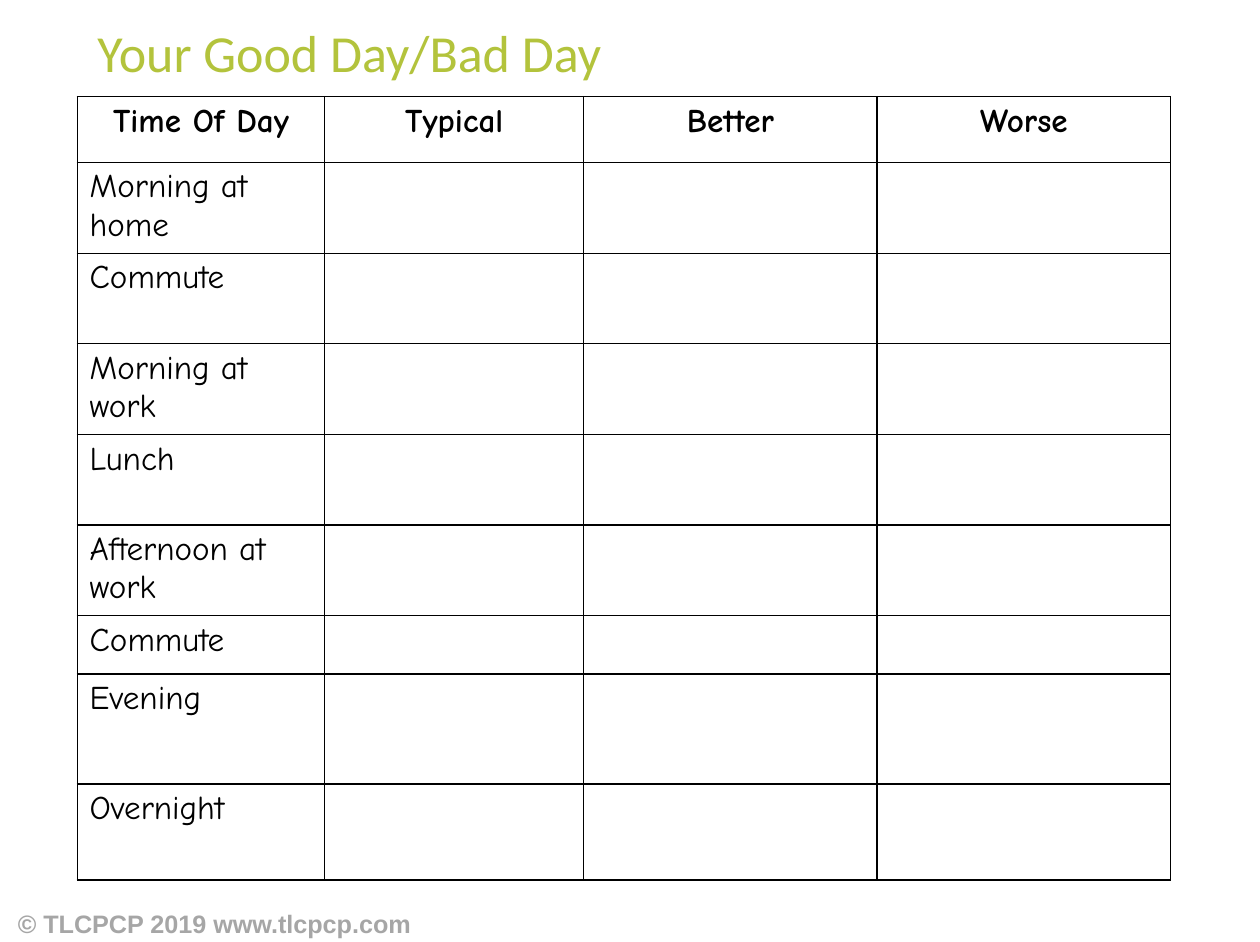
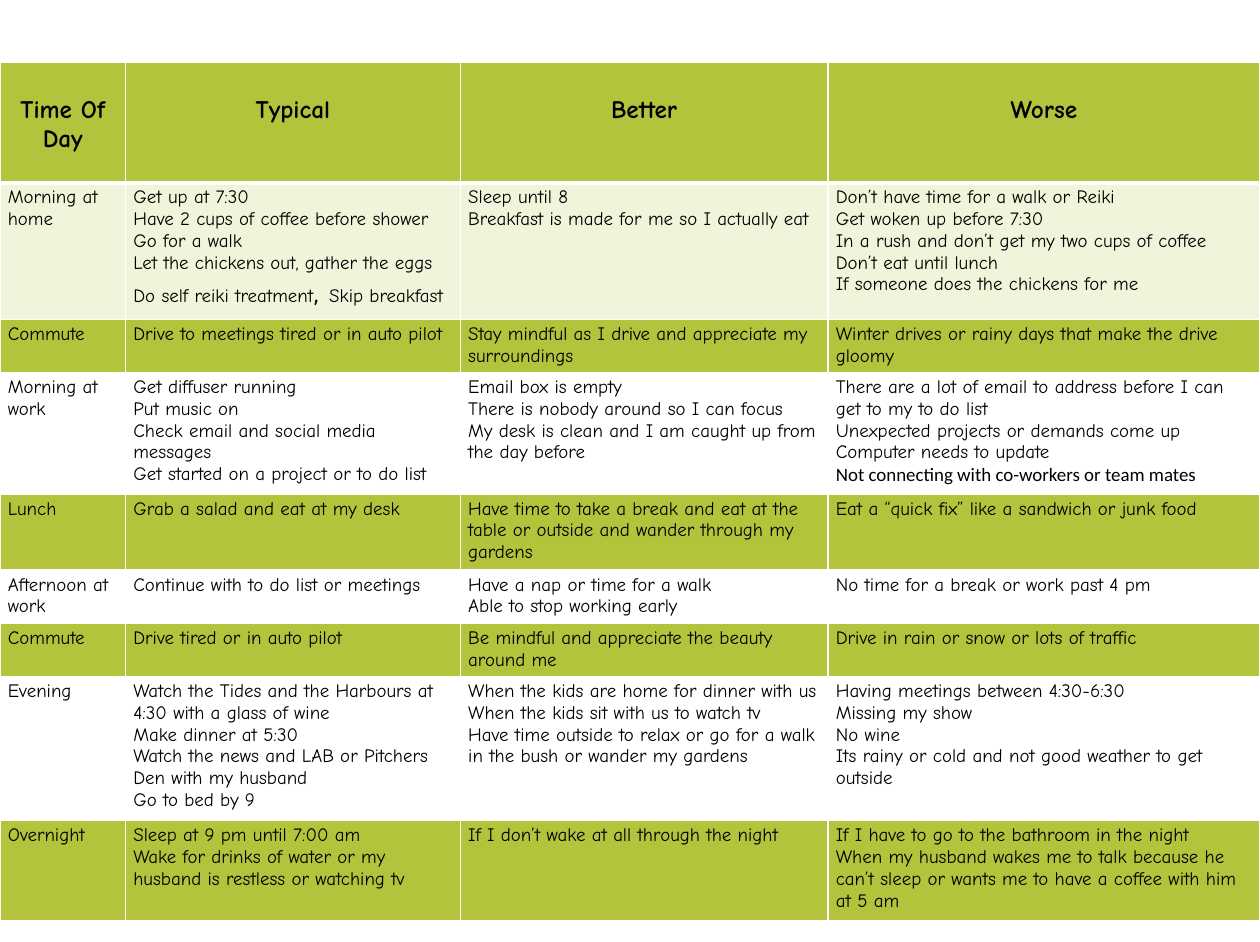
import pptx
import pptx.dml.color
import pptx.enum.text
import pptx.util
import lxml.etree
from pptx.oxml.ns import qn

Pt = pptx.util.Pt
ALIGN = pptx.enum.text.PP_ALIGN
ANCHOR = pptx.enum.text.MSO_ANCHOR

# Shared style
GREEN, PALE, BLACK, WHITE, GREY = "B3C33C", "F0F4DA", "000000", "FFFFFF", "A6A6A6"
HAND, PLAIN, FOOT = "Comic Neue", "Calibri", "Arial"
SLIDE_W, SLIDE_H = 799.2, 597.6

HEADINGS = ["Time Of Day", "Typical", "Better", "Worse"]
TIMES = ["Morning at home", "Commute", "Morning at work", "Lunch",
         "Afternoon at work", "Commute", "Evening", "Overnight"]

# Typical, better and worse for each time of day; a paragraph is a string
# or a list of (text, size, font) runs
ANSWERS = [
    [["Get up at 7:30", "Have 2 cups of coffee before shower", "Go for a walk",
      "Let the chickens out, gather the eggs",
      [("Do self reiki treatment", 12, HAND), (", ", 20, HAND),
       ("Skip breakfast", 12, HAND)]],
     ["Sleep until 8", "Breakfast is made for me so I actually eat"],
     ["Don’t have time for a walk or Reiki", "Get woken up before 7:30",
      "In a rush and don’t get my two cups of coffee", "Don’t eat until lunch",
      "If someone does the chickens for me"]],
    [["Drive to meetings tired or in auto pilot"],
     ["Stay mindful as I drive and appreciate my surroundings"],
     ["Winter drives or rainy days that make the drive gloomy"]],
    [["Get diffuser running", "Put music on",
      "Check email and social media messages",
      "Get started on a project or to do list"],
     ["Email box is empty", "There is nobody around so I can focus",
      "My desk is clean and I am caught up from the day before"],
     ["There are a lot of email to address before I can get to my to do list",
      "Unexpected projects or demands come up", "Computer needs to update",
      [("Not connecting with co-workers or team mates", 12, PLAIN)]]],
    [["Grab a salad and eat at my desk"],
     ["Have time to take a break and eat at the table or outside and wander "
      "through my gardens"],
     ["Eat a “quick fix” like a sandwich or junk food"]],
    [["Continue with to do list or meetings"],
     ["Have a nap or time for a walk", "Able to stop working early"],
     ["No time for a break or work past 4 pm"]],
    [["Drive tired or in auto pilot"],
     ["Be mindful and appreciate the beauty around me"],
     ["Drive in rain or snow or lots of traffic"]],
    [["Watch the Tides and the Harbours at 4:30 with a glass of wine",
      "Make dinner at 5:30",
      "Watch the news and LAB or Pitchers Den with my husband",
      "Go to bed by 9"],
     ["When the kids are home for dinner with us",
      "When the kids sit with us to watch tv",
      "Have time outside to relax or go for a walk in the bush or wander my "
      "gardens"],
     ["Having meetings between 4:30-6:30", "Missing my show", "No wine",
      "Its rainy or cold and not good weather to get outside"]],
    [["Sleep at 9 pm until 7:00 am",
      "Wake for drinks of water or my husband is restless or watching tv"],
     ["If I don’t wake at all through the night"],
     ["If I have to go to the bathroom in the night",
      "When my husband wakes me to talk because he can’t sleep or wants me to "
      "have a coffee with him at 5 am"]],
]


def rgb(value):
    return pptx.dml.color.RGBColor.from_string(value)


def write(frame, paragraphs, size, font, color, bold=False, align=ALIGN.LEFT):
    for i, content in enumerate(paragraphs):
        paragraph = frame.paragraphs[0] if i == 0 else frame.add_paragraph()
        paragraph.alignment = align
        runs = [(content, size, font)] if isinstance(content, str) else content
        for text, run_size, run_font in runs:
            run = paragraph.add_run()
            run.text = text
            run.font.size = Pt(run_size)
            run.font.name = run_font
            run.font.bold = bold
            run.font.color.rgb = rgb(color)


def add_line(slide, box, text, size, font, color, bold=False):
    """One line of text, centred vertically in its box."""
    frame = slide.shapes.add_textbox(*map(Pt, box)).text_frame
    frame.word_wrap = True
    frame.vertical_anchor = ANCHOR.MIDDLE
    write(frame, [text], size, font, color, bold)


def set_borders(cell, color, top, bottom):
    properties = cell._tc.get_or_add_tcPr()
    for side, width in (("L", 1), ("R", 1), ("T", top), ("B", bottom)):
        line = lxml.etree.SubElement(properties, qn("a:ln" + side), w=str(Pt(width)))
        fill = lxml.etree.SubElement(line, qn("a:solidFill"))
        lxml.etree.SubElement(fill, qn("a:srgbClr"), val=color)


def add_day_table(slide, left, top, columns, heights, rows, size, head_size,
                  margins, head_top, border, head_rule, fills):
    """Heading row and one row for each time of day."""
    table = slide.shapes.add_table(len(heights), len(columns), Pt(left), Pt(top),
                                   Pt(sum(columns)), Pt(sum(heights))).table
    table.first_row = table.horz_banding = False
    for column, width in zip(table.columns, columns):
        column.width = Pt(width)
    for r, (height, contents) in enumerate(zip(heights, rows)):
        table.rows[r].height = Pt(height)
        head = r == 0
        for c, paragraphs in enumerate(contents):
            cell = table.cell(r, c)
            cell.margin_left = cell.margin_right = Pt(margins[0])
            cell.margin_top = Pt(head_top if head else margins[1])
            cell.margin_bottom = Pt(margins[1])
            set_borders(cell, border, head_rule if r == 1 else 1,
                        head_rule if head else 1)
            if fills[r]:
                cell.fill.solid()
                cell.fill.fore_color.rgb = rgb(fills[r])
            else:
                cell.fill.background()
            write(cell.text_frame, paragraphs, head_size if head else size, HAND,
                  BLACK, head, ALIGN.CENTER if head else ALIGN.LEFT)


def worksheet_slide(slide):
    add_line(slide, (54.7, 10, 689, 46), "Your Good Day/Bad Day", 33, PLAIN, GREEN)
    rows = [[[h] for h in HEADINGS]] + [[[t], [], [], []] for t in TIMES]
    add_day_table(slide, 49, 61.2, [157, 164.2, 186.2, 186.2],
                  [41.8, 56.4, 57.4, 56.4, 57.4, 56.4, 37, 69.8, 60.9], rows,
                  size=21, head_size=21, margins=(7.9, 3.6), head_top=3.8,
                  border=BLACK, head_rule=1, fills=[None] * 9)
    add_line(slide, (4.3, 572.4, 280, 26.6), "© TLCPCP 2019 www.tlcpcp.com",
             16, FOOT, GREY, True)


def example_slide(slide):
    rows = [[[h] for h in HEADINGS]]
    rows += [[[time]] + answers for time, answers in zip(TIMES, ANSWERS)]
    add_day_table(slide, 0, 39.6, [79.6, 212.4, 233.2, 274],
                  [76.4, 85.2, 32.8, 75.4, 46.6, 33.6, 32.8, 89, 63.6], rows,
                  size=12, head_size=16, margins=(5, 2.5), head_top=21.5,
                  border=WHITE, head_rule=3,
                  fills=[GREEN, PALE] + [GREEN, None] * 3 + [GREEN])


def main():
    deck = pptx.Presentation()
    deck.slide_width, deck.slide_height = Pt(SLIDE_W), Pt(SLIDE_H)
    for build in (worksheet_slide, example_slide):
        build(deck.slides.add_slide(deck.slide_layouts[6]))
    deck.save("out.pptx")


if __name__ == "__main__":
    main()
